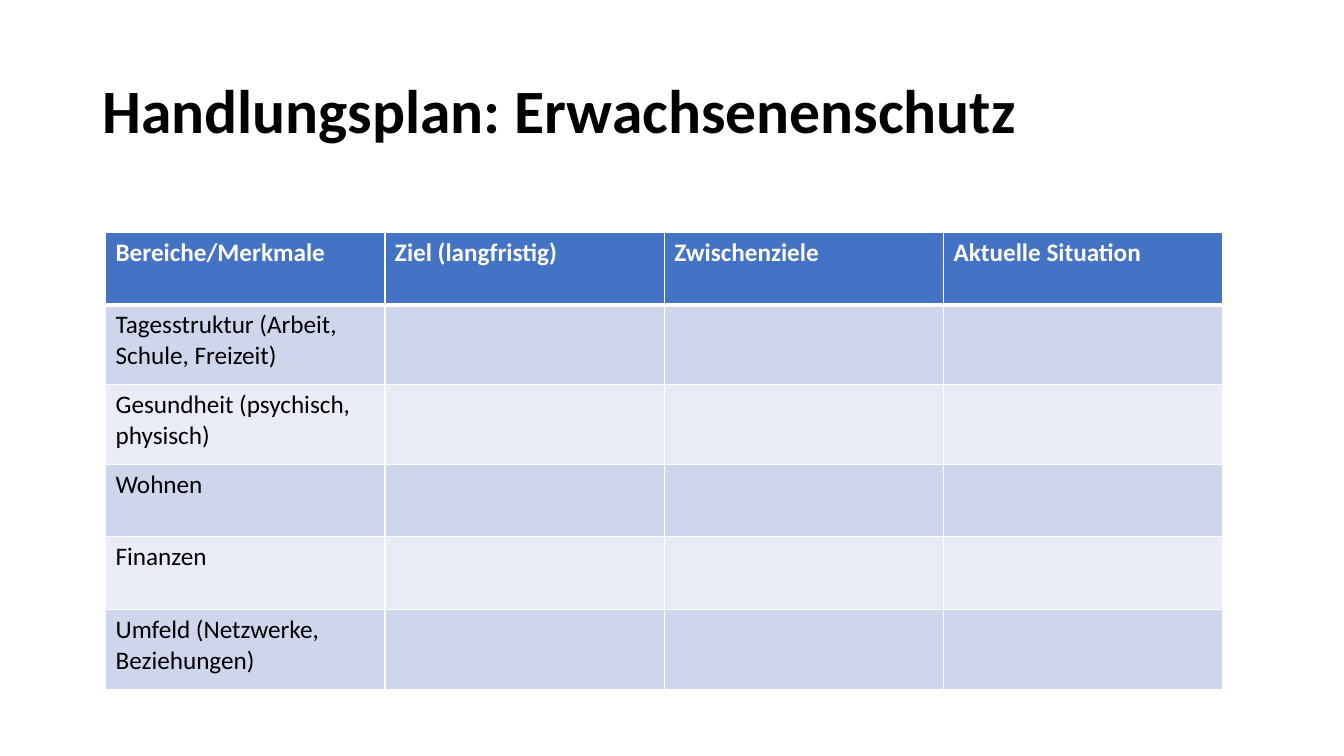
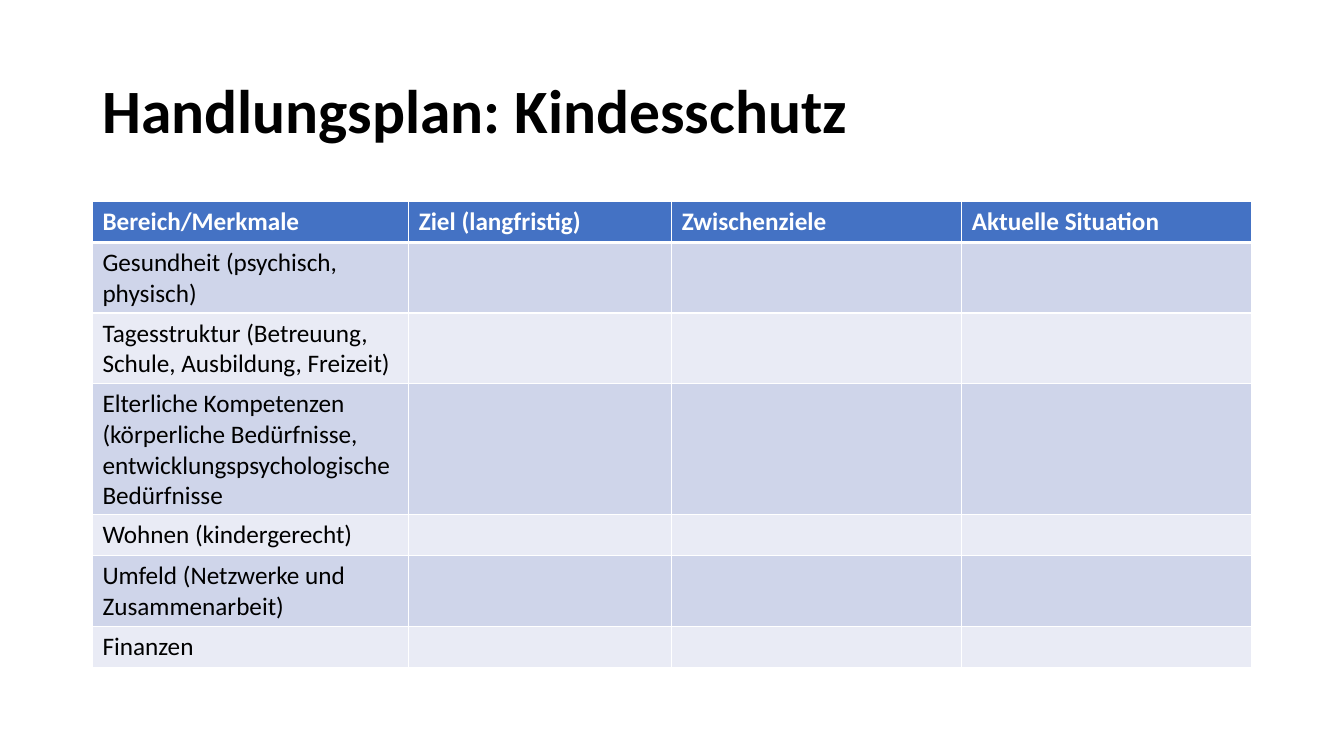
from dataclasses import dataclass

from lxml.etree import SubElement
from pptx import Presentation
from pptx.dml.color import RGBColor
from pptx.enum.text import MSO_ANCHOR
from pptx.oxml.ns import qn
from pptx.presentation import Presentation as Deck
from pptx.slide import Slide
from pptx.table import _Cell as Cell
from pptx.text.text import _Paragraph as Paragraph
from pptx.util import Cm, Pt

FONT = "Calibri"
BLACK = "000000"
WHITE = "FFFFFF"
HEADER_FILL = "4472C4"
BAND_FILLS = ("CFD5EA", "E9EBF5")
THIN_BORDER = 1
HEADER_BORDER = 3
TITLE_FORMAT = {"name": FONT, "size": Pt(44), "bold": True}
HEADER_FORMAT = {"name": FONT, "size": Pt(18), "bold": True}
BODY_FORMAT = {"name": FONT, "size": Pt(18), "bold": False}


@dataclass(frozen=True)
class ActionPlan:
    title: str
    left: float
    top: float
    column_widths: tuple[float, ...]
    row_heights: tuple[float, ...]
    area_heading: str
    areas: tuple[str, ...]

    @property
    def headings(self) -> tuple[str, ...]:
        return (self.area_heading, "Ziel (langfristig)", "Zwischenziele", "Aktuelle Situation")


PLANS = (
    ActionPlan(
        title="Handlungsplan: Erwachsenenschutz",
        left=2.66,
        top=5.85,
        column_widths=(7.04,) * 4,
        row_heights=(1.83, 2.01, 2.01, 1.83, 1.83, 2.01),
        area_heading="Bereiche/Merkmale",
        areas=(
            "Tagesstruktur (Arbeit, Schule, Freizeit)",
            "Gesundheit (psychisch, physisch)",
            "Wohnen",
            "Finanzen",
            "Umfeld (Netzwerke, Beziehungen)",
        ),
    ),
    ActionPlan(
        title="Handlungsplan: Kindesschutz",
        left=2.33,
        top=5.08,
        column_widths=(7.97, 6.63, 7.31, 7.31),
        row_heights=(1.03,) * 7,
        area_heading="Bereich/Merkmale",
        areas=(
            "Gesundheit (psychisch, physisch)",
            "Tagesstruktur (Betreuung, Schule, Ausbildung, Freizeit)",
            "Elterliche Kompetenzen (körperliche Bedürfnisse, "
            "entwicklungspsychologische Bedürfnisse",
            "Wohnen (kindergerecht)",
            "Umfeld (Netzwerke und Zusammenarbeit)",
            "Finanzen",
        ),
    ),
)


def color(value: str) -> RGBColor:
    return RGBColor.from_string(value)


def write(paragraph: Paragraph, text: str, text_format: dict, text_color: str) -> None:
    span = paragraph.add_run()
    span.text = text
    for name, value in text_format.items():
        setattr(span.font, name, value)
    span.font.color.rgb = color(text_color)


def add_title(page: Slide, text: str) -> None:
    box = page.shapes.add_textbox(Cm(2.33), Cm(1.01), Cm(29.21), Cm(3.68))
    frame = box.text_frame
    frame.word_wrap = True
    frame.vertical_anchor = MSO_ANCHOR.MIDDLE
    para = frame.paragraphs[0]
    para.line_spacing = 0.9
    write(para, text, TITLE_FORMAT, BLACK)


def add_borders(cell: Cell, row_index: int) -> None:
    widths = {
        "a:lnL": THIN_BORDER,
        "a:lnR": THIN_BORDER,
        "a:lnT": HEADER_BORDER if row_index == 1 else THIN_BORDER,
        "a:lnB": HEADER_BORDER if row_index == 0 else THIN_BORDER,
    }
    properties = cell._tc.get_or_add_tcPr()
    for tag, width in widths.items():
        line = SubElement(properties, qn(tag), w=str(Pt(width)))
        fill = SubElement(line, qn("a:solidFill"))
        SubElement(fill, qn("a:srgbClr"), val=WHITE)


def style_cell(cell: Cell, row_index: int) -> None:
    add_borders(cell, row_index)
    cell.fill.solid()
    fill = BAND_FILLS[(row_index - 1) % 2] if row_index else HEADER_FILL
    cell.fill.fore_color.rgb = color(fill)


def add_plan_table(page: Slide, plan: ActionPlan) -> None:
    widths, heights = plan.column_widths, plan.row_heights
    table = page.shapes.add_table(
        len(heights), len(widths),
        Cm(plan.left), Cm(plan.top), Cm(sum(widths)), Cm(sum(heights)),
    ).table
    for column, width in zip(table.columns, widths):
        column.width = Cm(width)
    for row_index, (row, height) in enumerate(zip(table.rows, heights)):
        row.height = Cm(height)
        for cell in row.cells:
            style_cell(cell, row_index)
    for column_index, heading in enumerate(plan.headings):
        para = table.cell(0, column_index).text_frame.paragraphs[0]
        write(para, heading, HEADER_FORMAT, WHITE)
    for row_index, area in enumerate(plan.areas, start=1):
        para = table.cell(row_index, 0).text_frame.paragraphs[0]
        write(para, area, BODY_FORMAT, BLACK)


def add_plan_page(deck: Deck, plan: ActionPlan) -> None:
    page = deck.slides.add_slide(deck.slide_layouts[6])
    add_title(page, plan.title)
    add_plan_table(page, plan)


def main() -> None:
    deck = Presentation()
    deck.slide_width = Cm(33.87)
    deck.slide_height = Cm(19.05)
    for plan in PLANS:
        add_plan_page(deck, plan)
    deck.save("out.pptx")


if __name__ == "__main__":
    main()
